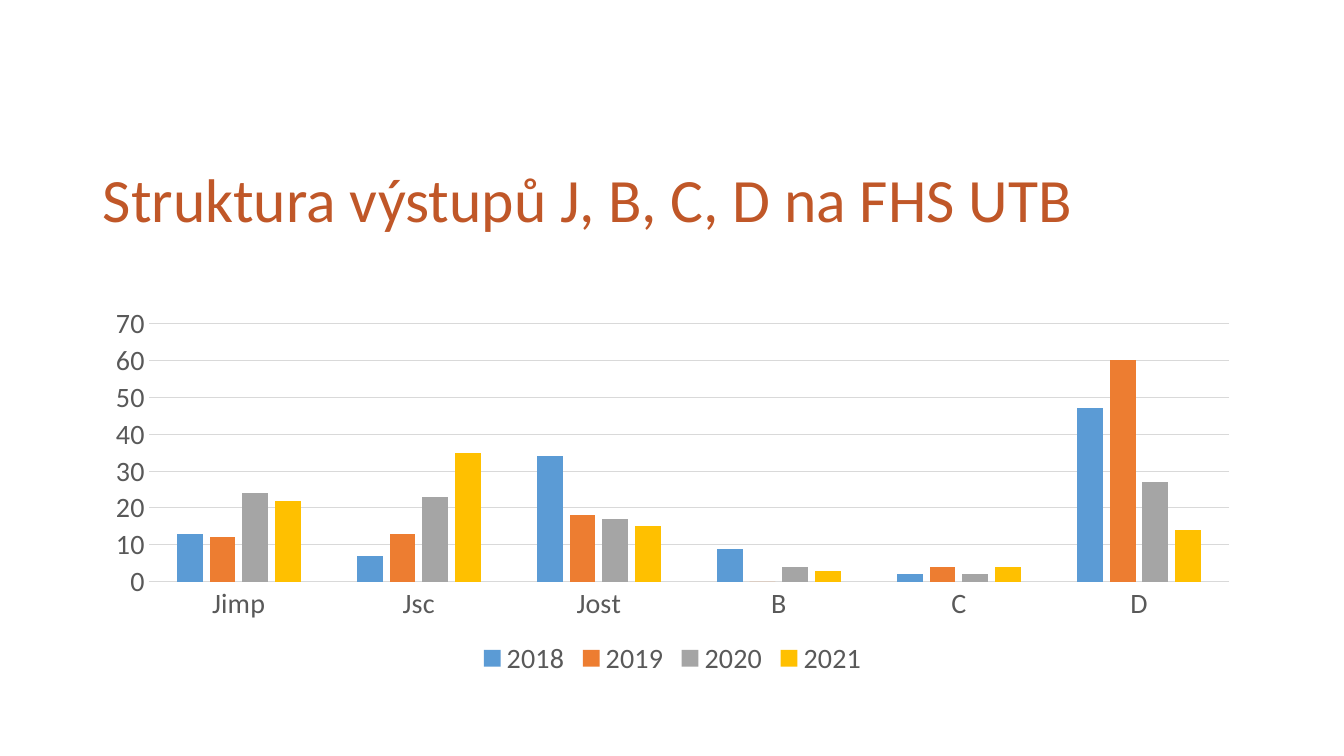
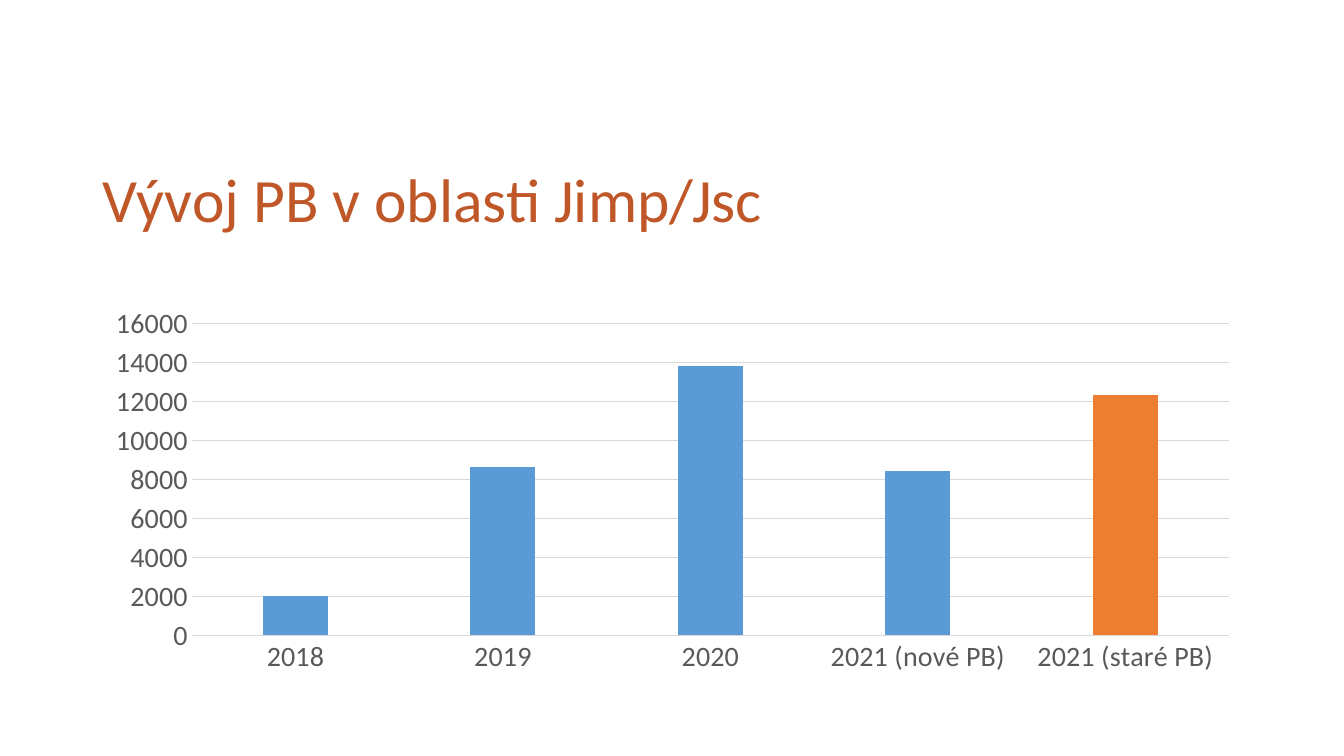
from pptx import Presentation
from pptx.chart.data import CategoryChartData
from pptx.dml.color import RGBColor
from pptx.enum.chart import XL_CHART_TYPE, XL_LEGEND_POSITION, XL_TICK_MARK
from pptx.enum.text import MSO_ANCHOR, MSO_AUTO_SIZE, PP_ALIGN
from pptx.util import Inches, Pt

FONT = "Calibri"
RUST = RGBColor(0xC0, 0x57, 0x28)
LABEL_GRAY = RGBColor(0x59, 0x59, 0x59)
GRID_GRAY = RGBColor(0xD9, 0xD9, 0xD9)
BLUE = RGBColor(0x5B, 0x9B, 0xD5)
ORANGE = RGBColor(0xED, 0x7D, 0x31)
GRAY = RGBColor(0xA5, 0xA5, 0xA5)
YELLOW = RGBColor(0xFF, 0xC0, 0x00)
SERIES_COLORS = (BLUE, ORANGE, GRAY, YELLOW)

TITLE_BOX = [Inches(n) for n in (0.92, 1.28, 11.5, 1.45)]
CHART_BOX = [Inches(n) for n in (0.92, 2.96, 11.5, 3.8)]

SLIDES = [
    {
        "title": "Struktura výstupů J, B, C, D na FHS UTB",
        "categories": ["Jimp", "Jsc", "Jost", "B", "C", "D"],
        "series": {
            "2018": [13, 7, 34, 9, 2, 47],
            "2019": [12, 13, 18, 0, 4, 60],
            "2020": [24, 23, 17, 4, 2, 27],
            "2021": [22, 35, 15, 3, 4, 14],
        },
        "highlights": {},
        "top": 70,
        "step": 10,
    },
    {
        "title": "Vývoj PB v oblasti Jimp/Jsc",
        "categories": ["2018", "2019", "2020", "2021 (nové PB)", "2021 (staré PB)"],
        "series": {"PB": [2000, 8600, 13800, 8400, 12300]},
        "highlights": {4: ORANGE},
        "top": 16000,
        "step": 2000,
    },
]


def style_font(font, size, color):
    font.name = FONT
    font.size = Pt(size)
    font.bold = False
    font.color.rgb = color


def write_text(shape, text, size=44, color=RUST, align=PP_ALIGN.LEFT,
               anchor=MSO_ANCHOR.MIDDLE, line_spacing=0.9):
    frame = shape.text_frame
    frame.text = text
    frame.word_wrap = True
    frame.auto_size = MSO_AUTO_SIZE.NONE
    frame.vertical_anchor = anchor
    paragraph = frame.paragraphs[0]
    paragraph.alignment = align
    paragraph.line_spacing = line_spacing
    style_font(paragraph.runs[0].font, size, color)


def paint(fill, color):
    fill.solid()
    fill.fore_color.rgb = color


def style_axis(axis):
    axis.major_tick_mark = axis.minor_tick_mark = XL_TICK_MARK.NONE
    style_font(axis.tick_labels.font, 20, LABEL_GRAY)


def style_line(line):
    line.color.rgb = GRID_GRAY
    line.width = Pt(0.75)


def add_columns(slide, content):
    figures = CategoryChartData(number_format="General")
    figures.categories = content["categories"]
    for name, values in content["series"].items():
        figures.add_series(name, values)
    chart = slide.shapes.add_chart(
        XL_CHART_TYPE.COLUMN_CLUSTERED, *CHART_BOX, figures).chart
    style_font(chart.font, 20, LABEL_GRAY)
    chart.has_title = False

    columns = chart.plots[0]
    columns.gap_width = 219
    columns.overlap = -27
    columns.vary_by_categories = False
    for series, color in zip(columns.series, SERIES_COLORS):
        paint(series.format.fill, color)
        for index, highlight in content["highlights"].items():
            paint(series.points[index].format.fill, highlight)

    style_axis(chart.category_axis)
    style_line(chart.category_axis.format.line)
    scale = chart.value_axis
    style_axis(scale)
    scale.format.line.fill.background()
    scale.has_major_gridlines = True
    style_line(scale.major_gridlines.format.line)
    scale.minimum_scale = 0
    scale.maximum_scale = content["top"]
    scale.major_unit = content["step"]

    chart.has_legend = len(content["series"]) > 1
    if chart.has_legend:
        chart.legend.position = XL_LEGEND_POSITION.BOTTOM
        chart.legend.include_in_layout = False
        style_font(chart.legend.font, 20, LABEL_GRAY)


def main():
    deck = Presentation()
    deck.slide_width = Inches(13.33)
    deck.slide_height = Inches(7.5)
    for content in SLIDES:
        slide = deck.slides.add_slide(deck.slide_layouts[5])
        heading = slide.shapes.title
        heading.left, heading.top, heading.width, heading.height = TITLE_BOX
        write_text(heading, content["title"])
        add_columns(slide, content)
    deck.save("out.pptx")


if __name__ == "__main__":
    main()
